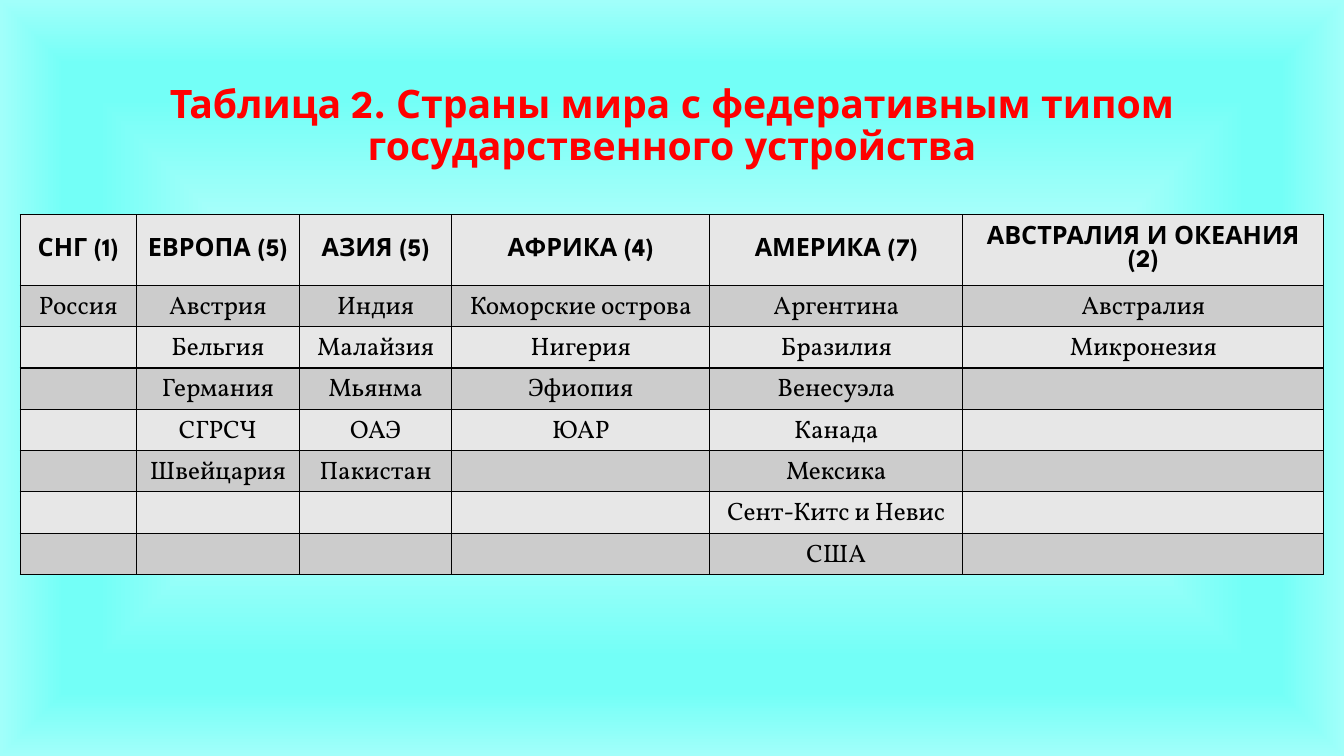
from lxml import etree
from pptx import Presentation
from pptx.dml.color import RGBColor
from pptx.enum.text import MSO_ANCHOR, PP_ALIGN
from pptx.oxml.ns import qn
from pptx.util import Inches, Pt

CENTER = PP_ALIGN.CENTER
MIDDLE = MSO_ANCHOR.MIDDLE
RED = RGBColor(0xFF, 0x00, 0x00)
BLACK = RGBColor(0x00, 0x00, 0x00)
LIGHT_GRAY = RGBColor(0xE7, 0xE7, 0xE7)
DARK_GRAY = RGBColor(0xCC, 0xCC, 0xCC)
PALE_CYAN = RGBColor(0xEF, 0xFF, 0xFE)
CYAN = RGBColor(0x73, 0xFF, 0xF7)
SOFT_CYAN = RGBColor(0xA1, 0xFF, 0xFA)

WIDTH, HEIGHT = 13.33, 7.5
BACKGROUND_STOPS = [(0, PALE_CYAN), (74, CYAN), (83, CYAN), (100, SOFT_CYAN)]
TITLE = "Таблица 2. Страны мира с федеративным типом государственного устройства"
TITLE_FONT = {"name": "League Spartan", "size": Pt(28), "bold": True}
HEADER_FONT = {"name": "League Spartan", "size": Pt(18), "bold": True}
BODY_FONT = {"name": "Vollkorn", "size": Pt(18), "bold": False}
COLUMN_WIDTHS = [1.15, 1.62, 1.51, 2.56, 2.51, 3.58]
HEADER_HEIGHT, ROW_HEIGHT = 0.59, 0.41
REGIONS = {
    "СНГ (1)": ["Россия"],
    "ЕВРОПА (5)": ["Австрия", "Бельгия", "Германия", "СГРСЧ", "Швейцария"],
    "АЗИЯ (5)": ["Индия", "Малайзия", "Мьянма", "ОАЭ", "Пакистан"],
    "АФРИКА (4)": ["Коморские острова", "Нигерия", "Эфиопия", "ЮАР"],
    "АМЕРИКА (7)": ["Аргентина", "Бразилия", "Венесуэла", "Канада", "Мексика",
                    "Сент-Китс и Невис", "США"],
    "АВСТРАЛИЯ И ОКЕАНИЯ (2)": ["Австралия", "Микронезия"],
}


def add_color(parent, color):
    """Append an RGB colour element to a parent element."""
    etree.SubElement(parent, qn("a:srgbClr"), val=str(color))


def write_text(paragraph, text, font_values, color):
    """Write one centred paragraph with the given font values."""
    paragraph.text = text
    paragraph.alignment = CENTER
    for name, value in font_values.items():
        setattr(paragraph.font, name, value)
    paragraph.font.color.rgb = color


def paint_background(slide, stops):
    """Fill the slide with a gradient that follows its outline."""
    slide.background.fill.gradient()
    gradient = slide.element.find(".//" + qn("a:gradFill"))
    for child in list(gradient):
        gradient.remove(child)
    stop_list = etree.SubElement(gradient, qn("a:gsLst"))
    for position, color in stops:
        stop = etree.SubElement(stop_list, qn("a:gs"), pos=str(position * 1000))
        add_color(stop, color)
    outline = etree.SubElement(gradient, qn("a:path"), {"path": "shape"})
    etree.SubElement(outline, qn("a:fillToRect"),
                     {side: "50000" for side in "ltrb"})


def add_title(slide, left, top, width, height):
    """Place the title in its box."""
    frame = slide.shapes.add_textbox(
        Inches(left), Inches(top), Inches(width), Inches(height)).text_frame
    frame.word_wrap = True
    frame.vertical_anchor = MIDDLE
    write_text(frame.paragraphs[0], TITLE, TITLE_FONT, RED)
    frame.paragraphs[0].line_spacing = 0.9


def add_borders(cell):
    """Draw thin black lines on all sides of a cell."""
    properties = cell._tc.get_or_add_tcPr()
    for index, side in enumerate("LRTB"):
        line = etree.Element(qn("a:ln" + side), w=str(Pt(1)))
        add_color(etree.SubElement(line, qn("a:solidFill")), BLACK)
        properties.insert(index, line)


def add_country_table(slide, left, top, width):
    """Place the table of regions and their federal countries."""
    row_count = 1 + max(map(len, REGIONS.values()))
    height = HEADER_HEIGHT + ROW_HEIGHT * (row_count - 1)
    table = slide.shapes.add_table(
        row_count, len(REGIONS), Inches(left), Inches(top),
        Inches(width), Inches(height)).table
    for column, share in zip(table.columns, COLUMN_WIDTHS):
        column.width = Inches(width * share / sum(COLUMN_WIDTHS))
    for index, row in enumerate(table.rows):
        row.height = Inches(ROW_HEIGHT if index else HEADER_HEIGHT)
    for column_index, (region, countries) in enumerate(REGIONS.items()):
        entries = [region, *countries]
        for row_index in range(row_count):
            cell = table.cell(row_index, column_index)
            cell.vertical_anchor = MIDDLE
            cell.fill.solid()
            cell.fill.fore_color.rgb = DARK_GRAY if row_index % 2 else LIGHT_GRAY
            add_borders(cell)
            text = entries[row_index] if row_index < len(entries) else ""
            font_values = BODY_FONT if row_index else HEADER_FONT
            write_text(cell.text_frame.paragraphs[0], text, font_values, BLACK)


def main():
    """Build and save the presentation."""
    presentation = Presentation()
    presentation.slide_width = Inches(WIDTH)
    presentation.slide_height = Inches(HEIGHT)
    slide = presentation.slides.add_slide(presentation.slide_layouts[6])
    paint_background(slide, BACKGROUND_STOPS)
    add_title(slide, 0, 0.74, WIDTH, 1.04)
    add_country_table(slide, 0.2, 2.13, WIDTH - 0.4)
    presentation.save("out.pptx")


if __name__ == "__main__":
    main()
